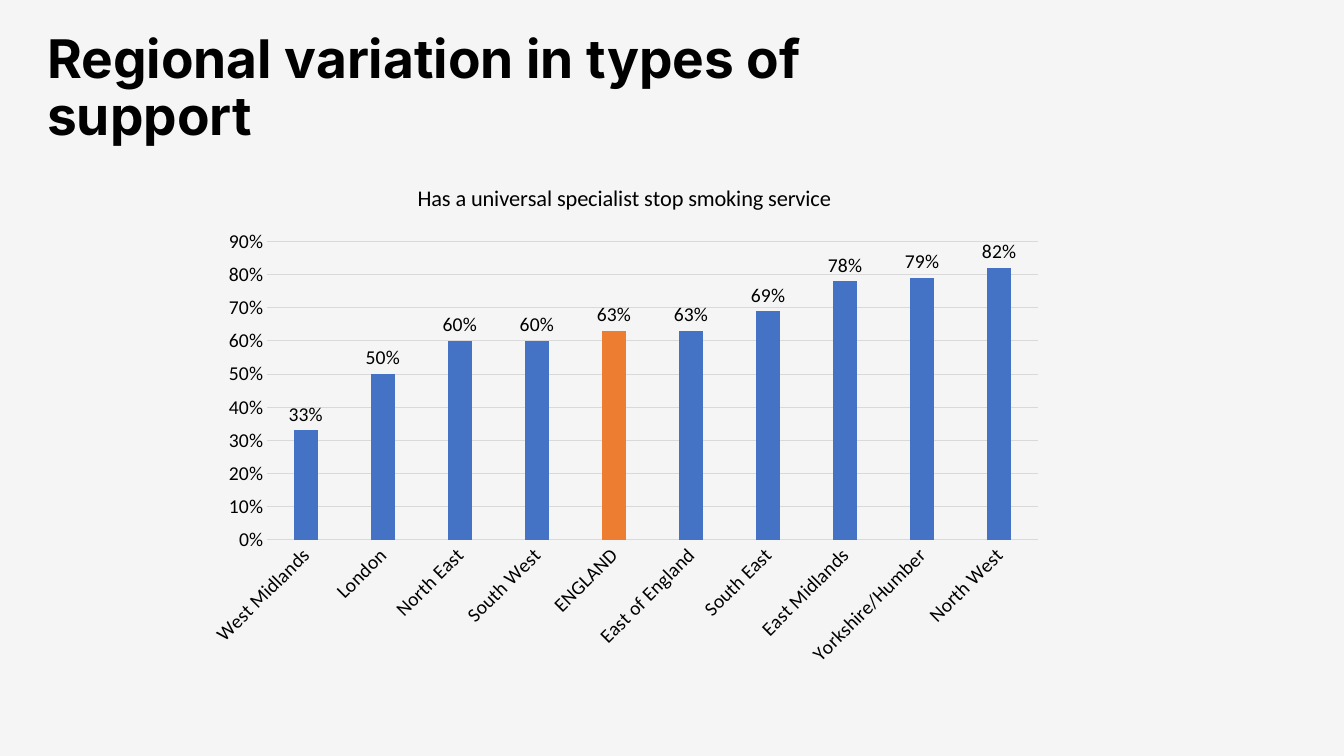
from pptx import Presentation
from pptx.chart.data import CategoryChartData as ChartData
from pptx.dml.color import RGBColor as RGB
from pptx.enum.chart import XL_CHART_TYPE as Kind, XL_LABEL_POSITION as Place, XL_TICK_MARK as Tick
from pptx.enum.text import MSO_ANCHOR as Anchor, MSO_AUTO_SIZE as Fit, PP_ALIGN as Align
from pptx.util import Pt

PX = 914400 / 100.8
COLORS = {"back": "F5F5F5", "text": "000000", "grid": "D9D9D9", "bar": "4472C4", "mark": "ED7D31"}
RATES = {
    "West Midlands": 0.33,
    "London": 0.5,
    "North East": 0.6,
    "South West": 0.6,
    "ENGLAND": 0.63,
    "East of England": 0.63,
    "South East": 0.69,
    "East Midlands": 0.78,
    "Yorkshire/Humber": 0.79,
    "North West": 0.82,
}


def px(n):
    return round(n * PX)


class Deck:
    """Holds the style and the current slide, and adds elements to it."""

    def __init__(self, wide, high):
        self.prs = Presentation()
        self.prs.slide_width, self.prs.slide_height = px(wide), px(high)
        self.slide = self.prs.slides.add_slide(self.prs.slide_layouts[5])
        self.paint(self.slide.background.fill, "back")

    def paint(self, fill, color):
        fill.solid()
        fill.fore_color.rgb = RGB.from_string(COLORS[color])

    def style(self, font, size, face="Calibri", bold=False):
        font.name, font.size, font.bold = face, Pt(size), bold
        font.color.rgb = RGB.from_string(COLORS["text"])

    def rule(self, line):
        line.width = Pt(0.75)
        line.color.rgb = RGB.from_string(COLORS["grid"])

    def title(self, text, left, top, wide, high):
        box = self.slide.shapes.title
        box.left, box.top, box.width, box.height = map(px, (left, top, wide, high))
        frame = box.text_frame
        frame.text = text
        frame.word_wrap, frame.auto_size = True, Fit.NONE
        frame.vertical_anchor = Anchor.MIDDLE
        para = frame.paragraphs[0]
        para.alignment, para.line_spacing = Align.LEFT, 0.9
        self.style(para.runs[0].font, 38, "Inter", True)

    def bars(self, name, rates, mark, left, top, wide, high):
        data = ChartData(number_format="0%")
        data.categories = list(rates)
        data.add_series("Series 1", list(rates.values()))
        frame = self.slide.shapes.add_chart(Kind.COLUMN_CLUSTERED, *map(px, (left, top, wide, high)), data)
        chart = frame.chart
        self.style(chart.font, 14)
        chart.has_legend = False
        chart.has_title = True
        head = chart.chart_title
        head.include_in_layout = False
        head.text_frame.text = name
        self.style(head.text_frame.paragraphs[0].runs[0].font, 16)

        plot = chart.plots[0]
        plot.gap_width, plot.overlap = 219, -27
        plot.vary_by_categories = False
        bars = plot.series[0]
        bars.invert_if_negative = False
        self.paint(bars.format.fill, "bar")
        self.paint(bars.points[list(rates).index(mark)].format.fill, "mark")
        tags = bars.data_labels
        tags.show_value, tags.position = True, Place.OUTSIDE_END
        tags.number_format, tags.number_format_is_linked = "0%", False
        self.style(tags.font, 14)

        cats, vals = chart.category_axis, chart.value_axis
        for axis in (cats, vals):
            axis.major_tick_mark = axis.minor_tick_mark = Tick.NONE
            self.style(axis.tick_labels.font, 14)
        self.rule(cats.format.line)
        cats._element.txPr.bodyPr.set("rot", "-2700000")
        vals.minimum_scale, vals.maximum_scale, vals.major_unit = 0, 0.9, 0.1
        vals.tick_labels.number_format = "0%"
        vals.tick_labels.number_format_is_linked = False
        vals.format.line.fill.background()
        self.rule(vals.major_gridlines.format.line)


def main():
    deck = Deck(1344, 756)
    deck.title("Regional variation in types of support", 37, 17, 894, 146)
    deck.bars("Has a universal specialist stop smoking service", RATES, "ENGLAND", 194, 163, 861, 514)
    deck.prs.save("out.pptx")


if __name__ == "__main__":
    main()
